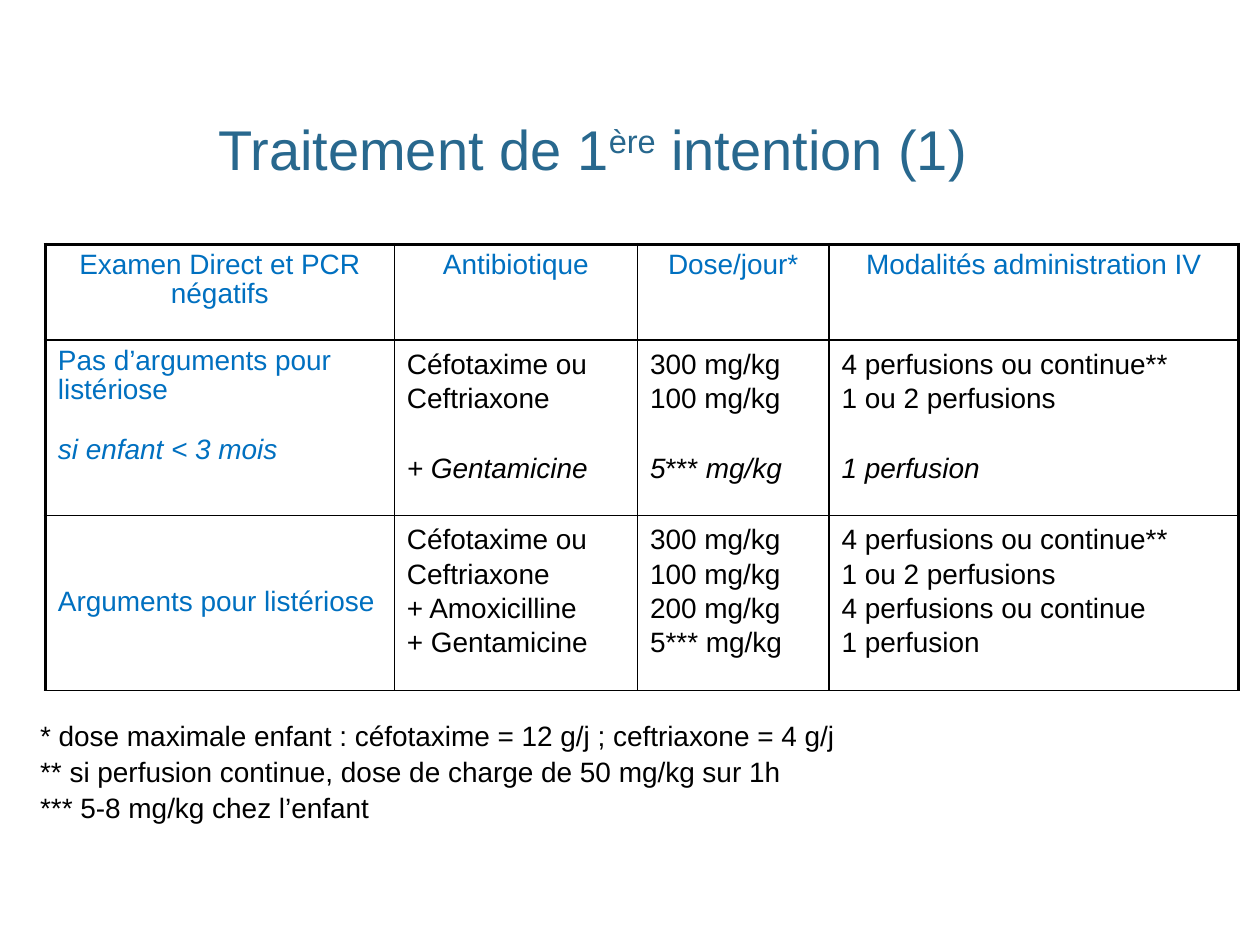
import pptx
import pptx.util
import pptx.dml.color
import pptx.enum.text
import pptx.oxml
import pptx.oxml.ns
from pptx.util import Inches

TITLE_BLUE = pptx.dml.color.RGBColor(0x28, 0x68, 0x8E)
LABEL_BLUE = pptx.dml.color.RGBColor(0x00, 0x70, 0xC0)
BLACK = pptx.dml.color.RGBColor(0x00, 0x00, 0x00)
ALIGN = pptx.enum.text.PP_ALIGN
ANCHOR = pptx.enum.text.MSO_ANCHOR
AUTO_SIZE = pptx.enum.text.MSO_AUTO_SIZE


def add_span(para, text, size, color, italic=False):
    span = para.add_run()
    span.text = text
    span.font.name = "Arial"
    span.font.size = pptx.util.Pt(size)
    span.font.bold = False
    span.font.italic = italic
    span.font.color.rgb = color
    return span


def add_border(cell, side, width):
    line = pptx.oxml.parse_xml(
        f'<a:{side} {pptx.oxml.ns.nsdecls("a")} w="{pptx.util.Pt(width)}">'
        f'<a:solidFill><a:srgbClr val="{BLACK}"/></a:solidFill></a:{side}>'
    )
    cell._tc.get_or_add_tcPr().append(line)


deck = pptx.Presentation()
deck.slide_width = Inches(10)
deck.slide_height = Inches(7.5)
page = deck.slides.add_slide(deck.slide_layouts[5])

title = page.shapes.title
title.left, title.top = Inches(0.22), Inches(0.29)
title.width, title.height = Inches(8.97), Inches(1.21)
title.text_frame.auto_size = AUTO_SIZE.NONE
title.text_frame.vertical_anchor = ANCHOR.BOTTOM
para = title.text_frame.paragraphs[0]
para.alignment = ALIGN.CENTER
para.line_spacing = 0.9
for text, raised in [("Traitement de 1", False), ("ère", True), (" intention (1)", False)]:
    span = add_span(para, text, 32, TITLE_BLUE)
    if raised:
        span.font._element.set("baseline", "30000")

column_widths = [2.77, 1.93, 1.52, 3.25]
row_heights = [0.76, 1.39, 1.39]
treatments = [
    [
        ["Examen Direct et PCR négatifs"],
        ["Antibiotique"],
        ["Dose/jour*"],
        ["Modalités administration IV"],
    ],
    [
        ["Pas d’arguments pour listériose", [("si enfant < 3 mois", True)]],
        ["Céfotaxime ou", "Ceftriaxone", [("+ Gentamicine", True)]],
        ["300 mg/kg", "100 mg/kg", [("5", True), ("***", False), (" mg/kg", True)]],
        ["4 perfusions ou continue**", "1 ou 2 perfusions", [("1 perfusion", True)]],
    ],
    [
        ["Arguments pour listériose"],
        ["Céfotaxime ou", "Ceftriaxone", "+ Amoxicilline", "+ Gentamicine"],
        ["300 mg/kg", "100 mg/kg", "200 mg/kg", "5*** mg/kg"],
        ["4 perfusions ou continue**", "1 ou 2 perfusions", "4 perfusions ou continue", "1 perfusion"],
    ],
]
table = page.shapes.add_table(
    len(row_heights), len(column_widths), Inches(0.36), Inches(1.94),
    Inches(sum(column_widths)), Inches(sum(row_heights)),
).table
table.first_row = False
table.horz_banding = False
for column, width in zip(table.columns, column_widths):
    column.width = Inches(width)
for row, height in zip(table.rows, row_heights):
    row.height = Inches(height)

last_column = len(column_widths) - 1
for row_index, row in enumerate(treatments):
    for column_index, lines in enumerate(row):
        cell = table.cell(row_index, column_index)
        is_header = row_index == 0
        is_label = is_header or column_index == 0
        add_border(cell, "lnL", 2.25 if column_index == 0 else 1)
        add_border(cell, "lnR", 2.25 if column_index == last_column else 1)
        add_border(cell, "lnT", 2.25 if is_header else 1)
        add_border(cell, "lnB", 1)
        cell.fill.background()
        for line_index, line in enumerate(lines):
            para = cell.text_frame.paragraphs[0] if line_index == 0 else cell.text_frame.add_paragraph()
            para.alignment = ALIGN.CENTER if is_header else ALIGN.LEFT
            para.line_spacing = 0.95 if is_label else 1.1
            spans = [(line, False)]
            if isinstance(line, list):
                spans = line
                para.space_before = pptx.util.Pt(17 if is_label else 20)
            for text, italic in spans:
                add_span(para, text, 16, LABEL_BLUE if is_label else BLACK, italic)
table.cell(2, 0).vertical_anchor = ANCHOR.MIDDLE

footnotes = [
    "* dose maximale enfant : céfotaxime = 12 g/j ; ceftriaxone = 4 g/j",
    "** si perfusion continue, dose de charge de 50 mg/kg sur 1h",
    "*** 5-8 mg/kg chez l’enfant",
]
box = page.shapes.add_textbox(Inches(0.22), Inches(5.65), Inches(9.9), Inches(0.94))
box.text_frame.word_wrap = True
box.text_frame.auto_size = AUTO_SIZE.SHAPE_TO_FIT_TEXT
for index, footnote in enumerate(footnotes):
    para = box.text_frame.paragraphs[0] if index == 0 else box.text_frame.add_paragraph()
    if index > 0:
        para.space_before = pptx.util.Pt(1.6)
    add_span(para, footnote, 16, BLACK)

deck.save("out.pptx")
